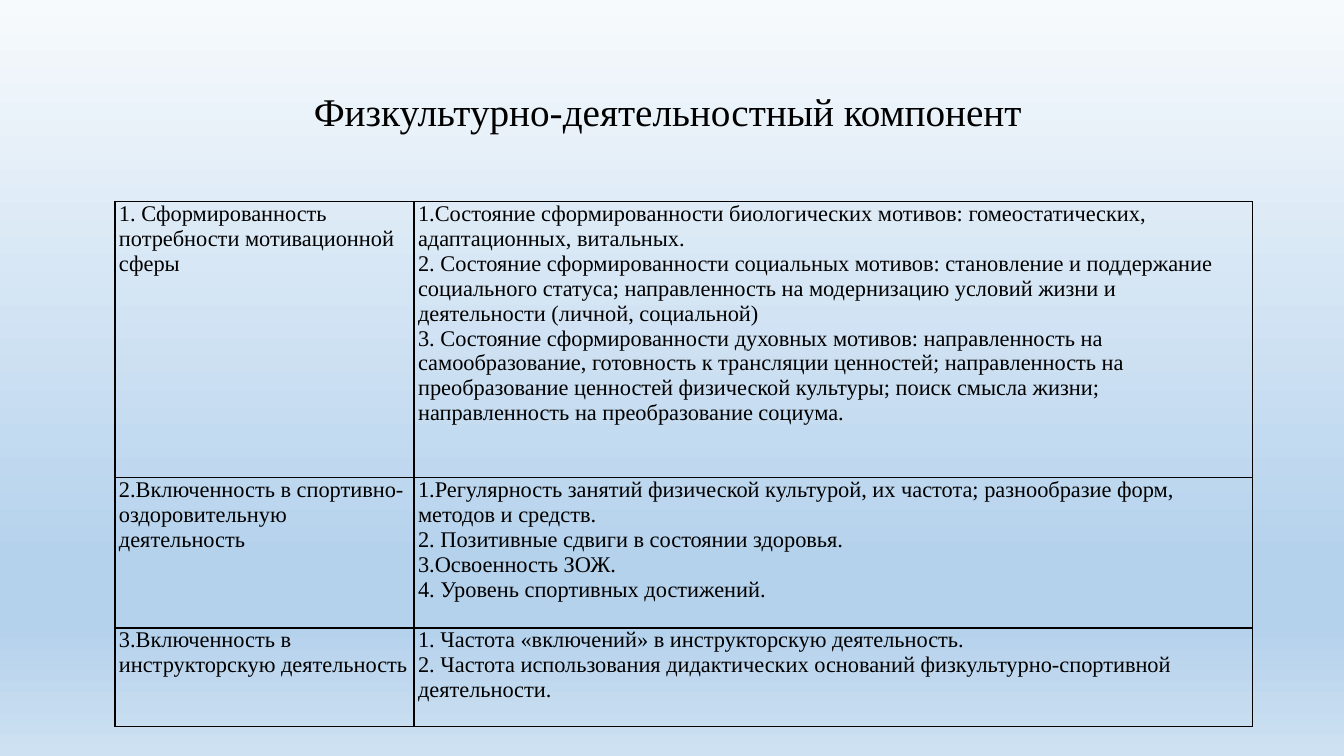
from dataclasses import dataclass

from lxml.etree import SubElement
from pptx import Presentation
from pptx.dml.color import RGBColor
from pptx.enum.text import MSO_ANCHOR as Anchor, PP_ALIGN as Align
from pptx.oxml.ns import qn
from pptx.util import Inches, Pt


@dataclass(frozen=True)
class Theme:
    font: str = "Times New Roman"
    ink: str = "000000"
    title_size: int = 28
    body_size: int = 16
    border_pt: float = 1
    gradient: tuple = ((0, "F7FAFD"), (74, "B5D2EC"), (83, "B5D2EC"), (100, "CEE1F2"))


THEME = Theme()
SLIDE_W, SLIDE_H = 13.33, 7.5
TITLE_BOX = (0.92, 0.4, 11.5, 1.45)
TABLE_BOX = (1.14, 2, 11.28, 5.21)
COL_SHARES = (0.263, 0.737)
ROW_SHARES = (0.526, 0.286, 0.188)

TITLE = "Физкультурно-деятельностный компонент "
# Each row: a criterion and the list of its indicators
CRITERIA = [
    ("1. Сформированность потребности мотивационной сферы", [
        "1.Состояние сформированности биологических мотивов: гомеостатических, "
        "адаптационных, витальных.",
        "2. Состояние сформированности социальных мотивов: становление и поддержание "
        "социального статуса; направленность на модернизацию условий жизни и "
        "деятельности (личной, социальной)",
        "3. Состояние сформированности духовных мотивов: направленность на "
        "самообразование, готовность к трансляции ценностей; направленность на "
        "преобразование ценностей физической культуры; поиск смысла жизни; "
        "направленность на преобразование социума.",
    ]),
    ("2.Включенность в спортивно-оздоровительную деятельность", [
        "1.Регулярность занятий физической культурой, их частота; разнообразие форм, "
        "методов и средств.",
        "2. Позитивные сдвиги в состоянии здоровья.",
        "3.Освоенность ЗОЖ.",
        "4. Уровень спортивных достижений.",
    ]),
    ("3.Включенность в инструкторскую деятельность", [
        "1. Частота «включений» в инструкторскую деятельность.",
        "2. Частота использования дидактических оснований физкультурно-спортивной "
        "деятельности.",
    ]),
]


def write(tf, lines, size, align=Align.LEFT, spacing=None):
    """Fill a text frame with one paragraph per line."""
    for i, line in enumerate(lines):
        p = tf.add_paragraph() if i else tf.paragraphs[0]
        p.alignment = align
        if spacing:
            p.line_spacing = spacing
        r = p.add_run()
        r.text = line
        r.font.name = THEME.font
        r.font.size = Pt(size)
        r.font.bold = False
        r.font.color.rgb = RGBColor.from_string(THEME.ink)


def paint_background(s):
    fill = s.background.fill
    fill.gradient()
    fill.gradient_angle = 270  # top to bottom
    stops = next(s.element.iter(qn("a:gsLst")))
    for stop in list(stops):
        stops.remove(stop)
    for percent, color in THEME.gradient:
        stop = SubElement(stops, qn("a:gs"), pos=str(percent * 1000))
        SubElement(stop, qn("a:srgbClr"), val=color)


def place_title(s, box):
    sp = s.shapes.title
    sp.left, sp.top, sp.width, sp.height = map(Inches, box)
    tf = sp.text_frame
    tf.word_wrap = True
    tf.vertical_anchor = Anchor.MIDDLE
    write(tf, [TITLE], THEME.title_size, align=Align.CENTER, spacing=0.9)


def format_cell(cell):
    cell.margin_left = cell.margin_right = Inches(0.04)
    cell.margin_top = cell.margin_bottom = 0
    cell.vertical_anchor = Anchor.TOP
    # Borders precede the fill in the cell properties
    props = cell._tc.get_or_add_tcPr()
    for side in ("a:lnL", "a:lnR", "a:lnT", "a:lnB"):
        line = SubElement(props, qn(side), w=str(Pt(THEME.border_pt)))
        SubElement(SubElement(line, qn("a:solidFill")), qn("a:srgbClr"), val=THEME.ink)
    cell.fill.background()


def place_table(s, box):
    _, _, width, height = box
    table = s.shapes.add_table(len(CRITERIA), 2, *map(Inches, box)).table
    table.first_row = table.horz_banding = False
    for col, share in zip(table.columns, COL_SHARES):
        col.width = Inches(width * share)
    for row, share, (criterion, indicators) in zip(table.rows, ROW_SHARES, CRITERIA):
        row.height = Inches(height * share)
        for cell, lines in zip(row.cells, ([criterion], indicators)):
            format_cell(cell)
            write(cell.text_frame, lines, THEME.body_size)


def main():
    prs = Presentation()
    prs.slide_width, prs.slide_height = Inches(SLIDE_W), Inches(SLIDE_H)
    s = prs.slides.add_slide(prs.slide_layouts[5])  # title only
    paint_background(s)
    place_title(s, TITLE_BOX)
    place_table(s, TABLE_BOX)
    prs.save("out.pptx")


if __name__ == "__main__":
    main()
